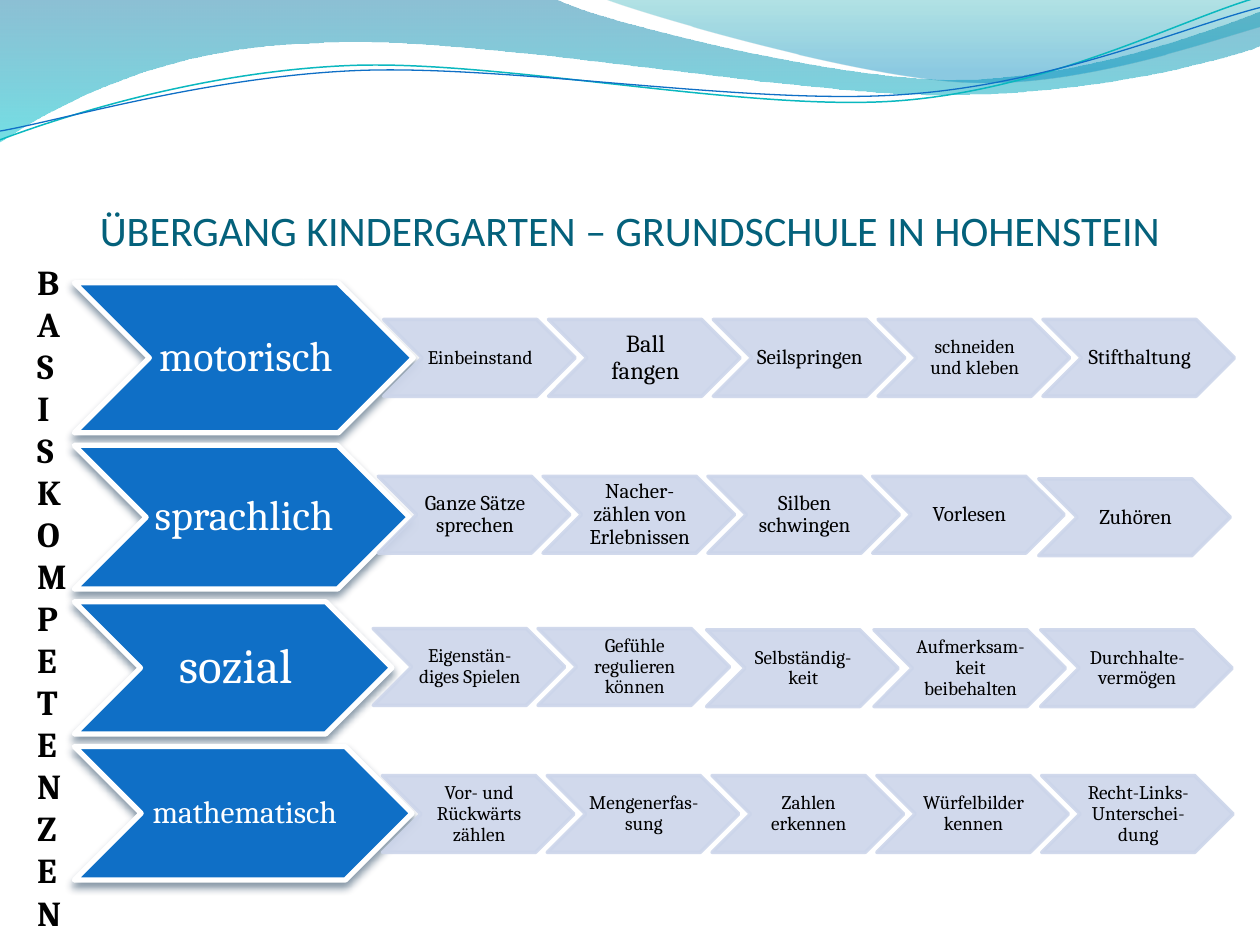
"""Build the slide on basic competences for the step from kindergarten to school."""
import math
from dataclasses import dataclass

from lxml import etree
from pptx import Presentation
from pptx import util as u
from pptx.dml.color import RGBColor
from pptx.enum import shapes, text
from pptx.oxml import ns

WIDTH, HEIGHT = u.Inches(10), u.Inches(7.5)
COLUMNS, ROWS = 100, 75
STEP_PITCH, STEP_WIDTH, STEP_HEIGHT = 13.08, 15.2, 6.1
LINE_TILT = -2.7


@dataclass(frozen=True)
class Theme:
    """Colours, fonts and type sizes of the slide."""
    title: str = "04617B"
    label: str = "0F6FC6"
    step: str = "CCD5EA"
    shadow: str = "042747"
    teal: str = "0AB8BF"
    light: str = "FFFFFF"
    dark: str = "000000"
    heading_font: str = "Calibri"
    body_font: str = "Cambria"
    title_size: float = 24
    column_size: float = 20
    large: float = 14
    medium: float = 12
    small: float = 11


THEME = Theme()


@dataclass(frozen=True)
class Step:
    """One skill in a row, with its type size and offset from the regular grid."""
    wording: str
    size: float = THEME.small
    right: float = 0
    down: float = 0


@dataclass(frozen=True)
class Competence:
    """One row: the area label and its skills."""
    name: str
    size: float
    top: float
    width: float
    height: float
    first_left: float
    steps_top: float
    steps: tuple


COMPETENCES = (
    Competence("motorisch", 24, 22.45, 26.9, 11.9, 30.45, 25.35, (
        Step("Einbeinstand"), Step("Ball fangen", THEME.large),
        Step("Seilspringen", THEME.medium), Step("schneiden und kleben"),
        Step("Stifthaltung", THEME.medium))),
    Competence("sprachlich", 24, 35.35, 26.6, 11.4, 30.02, 37.8, (
        Step("Ganze Sätze sprechen", THEME.medium),
        Step("Nacher-zählen von Erlebnissen", THEME.medium),
        Step("Silben schwingen", THEME.medium), Step("Vorlesen", THEME.medium),
        Step("Zuhören", THEME.medium, right=0.1, down=0.2))),
    Competence("sozial", 28, 47.75, 25.2, 10.5, 29.62, 49.88, (
        Step("Eigenstän-diges Spielen"), Step("Gefühle regulieren können"),
        Step("Selbständig-keit", right=0.3, down=0.1),
        Step("Aufmerksam-keit beibehalten", right=0.5, down=0.1),
        Step("Durchhalte-vermögen", right=0.65, down=0.1))),
    Competence("mathematisch", 18, 59.25, 26.8, 10.6, 30.35, 61.55, (
        Step("Vor- und Rückwärts zählen"), Step("Mengenerfas-sung"),
        Step("Zahlen erkennen"), Step("Würfelbilder kennen"),
        Step("Recht-Links-Unterschei-dung"))),
)

BROAD_WAVE = [(0, 0), (44, -0.1),
              (47.6, 1.7, 66.4, 6.3, 75.8, 6.3), (85.3, 6.3, 95.8, 2.6, 100, 0.9),
              (100.1, 3.6),
              (98.3, 4.4, 87, 7.6, 74.6, 7.5), (62.2, 7.5, 38.2, 2.8, 25.7, 3.4),
              (12.9, 3.6, 4.6, 8.3, -0.1, 11.3), (0, 0)]
RIGHT_WAVE = [(47.9, -0.1), (50.9, 1.1, 68.2, 6.2, 76.9, 6.5),
              (85.6, 6.9, 96.1, 3.2, 100, 2.1), (100, 0), (47.9, -0.1)]
TEAL_LINE = [(0, 11.1), (4.8, 9.3, 15.8, 5.7, 27.7, 5.2),
             (39.5, 4.7, 59.3, 8.9, 71.3, 8), (83.3, 7.1, 93.8, 1.5, 99.8, -0.2)]
BLUE_LINE = [(0, 10.4), (4.7, 9.6, 16.4, 6.1, 28.3, 5.6),
             (40.3, 5.1, 59.7, 8.4, 71.7, 7.5), (83.6, 6.7, 94.1, 2.1, 100, 0.6)]


def col(count):
    """Return the length of a number of grid columns."""
    return u.Emu(round(WIDTH * count / COLUMNS))


def row(count):
    """Return the length of a number of grid rows."""
    return u.Emu(round(HEIGHT * count / ROWS))


def set_alpha(fill_element, percents):
    """Give each colour inside an element its opacity."""
    for colour, percent in zip(fill_element.iter(ns.qn("a:srgbClr")), percents):
        etree.SubElement(colour, ns.qn("a:alpha"), val=str(percent * 1000))


def turn(point, centre, degrees):
    """Turn a point clockwise about a centre."""
    dx, dy = point[0] - centre[0], point[1] - centre[1]
    cos, sin = math.cos(math.radians(degrees)), math.sin(math.radians(degrees))
    return centre[0] + dx * cos - dy * sin, centre[1] + dx * sin + dy * cos


def bend(curve, segments):
    """Join the line steps of each cubic segment into one Bézier step."""
    outline = curve.element.spPr.find(".//" + ns.qn("a:path"))
    steps = iter(outline.findall(ns.qn("a:lnTo")))
    for segment in segments[1:]:
        first = next(steps)
        if len(segment) == 6:
            first.tag = ns.qn("a:cubicBezTo")
            for _ in range(2):
                following = next(steps)
                first.append(following[0])
                outline.remove(following)


def add_curve(slide, segments, close=False, tilt=0, centre=(0, 0)):
    """Draw a Bézier outline without shadow, stored level and then tilted."""
    points = [turn(segment[i:i + 2], centre, -tilt)
              for segment in segments for i in range(0, len(segment), 2)]
    start, *others = [(col(x), row(y)) for x, y in points]
    builder = slide.shapes.build_freeform(*start)
    builder.add_line_segments(others, close=close)
    curve = builder.convert_to_shape()
    bend(curve, segments)
    curve.rotation = tilt
    curve.shadow.inherit = False
    return curve


def add_wave(slide, segments, stops):
    """Draw a wave with a see-through gradient from top to bottom."""
    wave = add_curve(slide, segments, close=True)
    wave.line.fill.background()
    wave.fill.gradient()
    wave.fill.gradient_angle = 270
    for stop, (position, colour, _) in zip(wave.fill.gradient_stops, stops):
        stop.position = position
        stop.color.rgb = RGBColor.from_string(colour)
    set_alpha(wave.element.spPr.find(ns.qn("a:gradFill")), [stop[2] for stop in stops])


def add_wave_line(slide, segments, centre, colour, width):
    """Draw an open wavy line."""
    wave_line = add_curve(slide, segments, tilt=LINE_TILT, centre=centre)
    wave_line.fill.background()
    wave_line.line.color.rgb = RGBColor.from_string(colour)
    wave_line.line.width = u.Pt(width)


def write(frame, wording, font, size, colour, align, bold=False):
    """Fill a text frame and format its runs."""
    frame.word_wrap = True
    frame.text = wording
    for paragraph in frame.paragraphs:
        paragraph.alignment = align
        for run in paragraph.runs:
            run.font.name, run.font.size, run.font.bold = font, u.Pt(size), bold
            run.font.color.rgb = RGBColor.from_string(colour)


def set_margins(frame, left, top, bottom):
    """Set the inner margins in inches, with none on the right."""
    frame.margin_left, frame.margin_top = u.Inches(left), u.Inches(top)
    frame.margin_right, frame.margin_bottom = 0, u.Inches(bottom)


def add_chevron(slide, box, wording, size, fill, line, line_width, ink):
    """Draw a chevron with centred text."""
    left, top, width, height = box
    chevron = slide.shapes.add_shape(shapes.MSO_SHAPE.CHEVRON, col(left), row(top),
                                     col(width), row(height))
    chevron.fill.solid()
    chevron.fill.fore_color.rgb = RGBColor.from_string(fill)
    chevron.line.color.rgb = RGBColor.from_string(line)
    chevron.line.width = u.Pt(line_width)
    chevron.shadow.inherit = False
    frame = chevron.text_frame
    set_margins(frame, size / 720, 0.01, 0.01)
    frame.vertical_anchor = text.MSO_ANCHOR.MIDDLE
    write(frame, wording, THEME.body_font, size, ink, text.PP_ALIGN.CENTER)
    frame.paragraphs[0].line_spacing = 0.9
    return chevron


def add_drop_shadow(shape):
    """Put a soft shadow below a shape."""
    effects = shape.element.spPr.find(ns.qn("a:effectLst"))
    shadow = etree.SubElement(effects, ns.qn("a:outerShdw"), blurRad=str(u.Pt(4.5)),
                              dist=str(u.Pt(3)), dir="5400000", rotWithShape="0")
    etree.SubElement(shadow, ns.qn("a:srgbClr"), val=THEME.shadow)
    set_alpha(shadow, [48])


def add_competence(slide, area):
    """Draw the label of an area and the row of its skills."""
    label = add_chevron(slide, (5.9, area.top, area.width, area.height), area.name,
                        area.size, THEME.label, THEME.light, 3, THEME.light)
    add_drop_shadow(label)
    for index, step in enumerate(area.steps):
        box = (area.first_left + index * STEP_PITCH + step.right,
               area.steps_top + step.down, STEP_WIDTH, STEP_HEIGHT)
        skill = add_chevron(slide, box, step.wording, step.size, THEME.step,
                            THEME.step, 2, THEME.dark)
        set_alpha(skill.element.spPr, [90, 90])


def add_title(slide, wording):
    """Write the title above the rows."""
    frame = slide.shapes.add_textbox(col(5), row(7.7), col(90), row(12.5)).text_frame
    set_margins(frame, 0, 0.05, 0)
    frame.vertical_anchor = text.MSO_ANCHOR.BOTTOM
    write(frame, wording, THEME.heading_font, THEME.title_size, THEME.title,
          text.PP_ALIGN.CENTER)


def add_letter_column(slide, word):
    """Write a word downwards, one letter to a paragraph."""
    frame = slide.shapes.add_textbox(col(1.97), row(20.2), col(2.4), row(54.9)).text_frame
    write(frame, "\n".join(word), THEME.body_font, THEME.column_size, THEME.dark,
          text.PP_ALIGN.LEFT, bold=True)
    frame.auto_size = text.MSO_AUTO_SIZE.SHAPE_TO_FIT_TEXT


def main():
    """Build and save the slide."""
    deck = Presentation()
    deck.slide_width, deck.slide_height = WIDTH, HEIGHT
    slide = deck.slides.add_slide(deck.slide_layouts[6])
    add_wave(slide, BROAD_WAVE, ((0, "0074A1", 45), (1, "00C6CF", 55)))
    add_wave(slide, RIGHT_WAVE, ((0, "00A1A9", 30), (0.8, "008BBF", 45)))
    add_wave_line(slide, TEAL_LINE, (49.9, 5.75), THEME.teal, 0.85)
    add_wave_line(slide, BLUE_LINE, (49.95, 5.9), THEME.label, 0.75)
    add_title(slide, "ÜBERGANG KINDERGARTEN – GRUNDSCHULE IN HOHENSTEIN")
    for area in COMPETENCES:
        add_competence(slide, area)
    add_letter_column(slide, "BASISKOMPETENZEN")
    deck.save("out.pptx")


if __name__ == "__main__":
    main()
